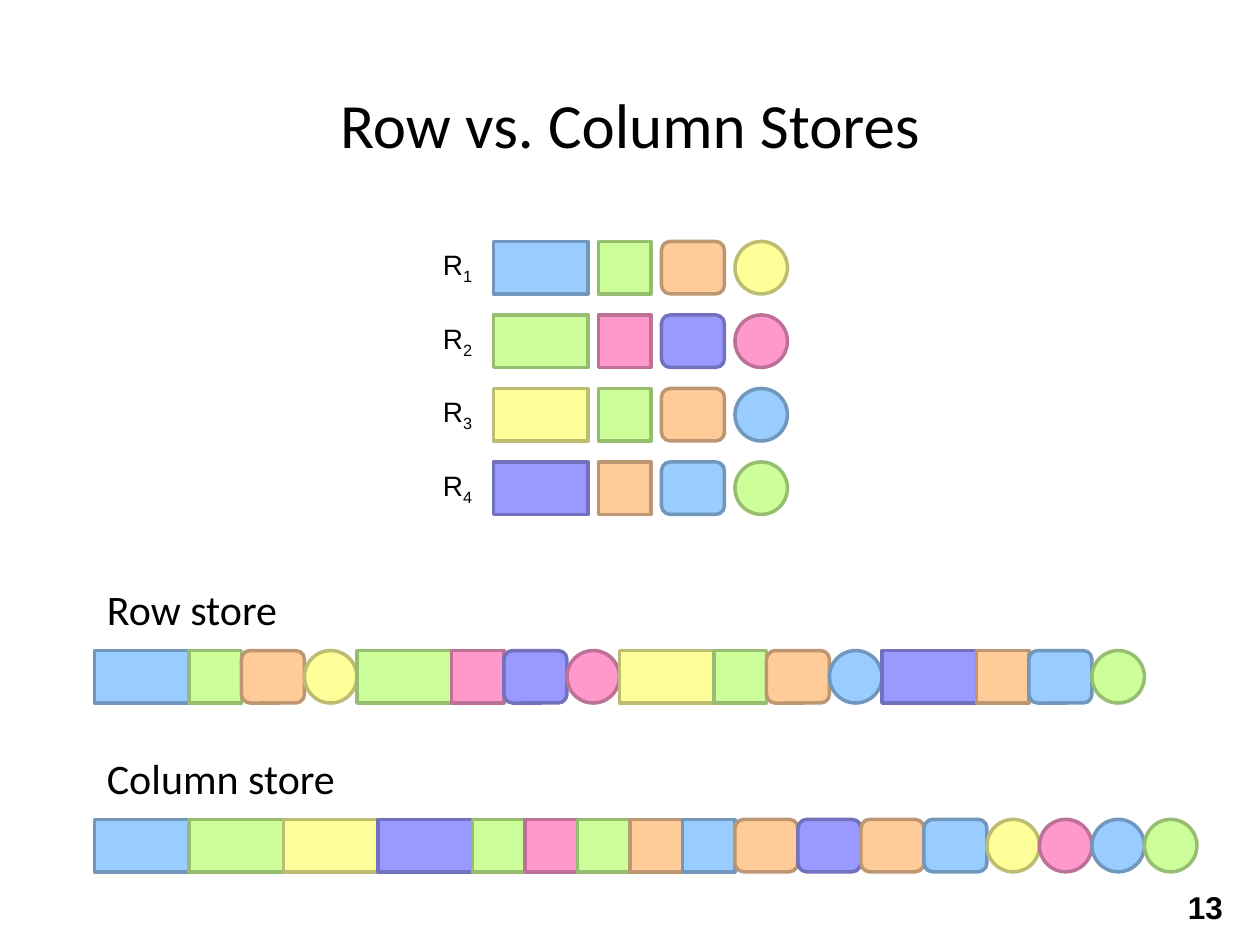
"""Build a slide comparing row and column storage of four records."""
from dataclasses import dataclass
from typing import Any

from pptx import Presentation
from pptx.dml.color import RGBColor
from pptx.enum.shapes import MSO_SHAPE as Shape
from pptx.enum.text import MSO_ANCHOR as Anchor, MSO_AUTO_SIZE as AutoSize, PP_ALIGN as Align
from pptx.util import Inches, Pt

BLACK = RGBColor(0x00, 0x00, 0x00)
UNIT = Inches(1 / 12)
HEIGHT = 5 * UNIT


@dataclass(frozen=True)
class Paint:
    fill: RGBColor
    line: RGBColor


@dataclass(frozen=True)
class Field:
    shape: Any
    units: int


@dataclass(frozen=True)
class Cell:
    field: Field
    paint: Paint


@dataclass(frozen=True)
class Store:
    name: str
    top: float
    label_width: float
    cells: list[Cell]


BLUE = Paint(RGBColor(0x99, 0xCC, 0xFF), RGBColor(0x71, 0x97, 0xBD))
GREEN = Paint(RGBColor(0xCC, 0xFF, 0x99), RGBColor(0x97, 0xBD, 0x71))
ORANGE = Paint(RGBColor(0xFF, 0xCC, 0x99), RGBColor(0xBD, 0x97, 0x71))
YELLOW = Paint(RGBColor(0xFF, 0xFF, 0x99), RGBColor(0xBD, 0xBD, 0x71))
PINK = Paint(RGBColor(0xFF, 0x99, 0xCC), RGBColor(0xBD, 0x71, 0x97))
PURPLE = Paint(RGBColor(0x99, 0x99, 0xFF), RGBColor(0x71, 0x71, 0xBD))

WIDE = Field(Shape.RECTANGLE, 9)
SQUARE = Field(Shape.RECTANGLE, 5)
ROUNDED = Field(Shape.ROUNDED_RECTANGLE, 6)
CIRCLE = Field(Shape.OVAL, 5)
FIELDS = (WIDE, SQUARE, ROUNDED, CIRCLE)

PAINTS = (
    (BLUE, GREEN, ORANGE, YELLOW),
    (GREEN, PINK, PURPLE, PINK),
    (YELLOW, GREEN, ORANGE, BLUE),
    (PURPLE, ORANGE, BLUE, GREEN),
)
RECORDS = [[Cell(field, paint) for field, paint in zip(FIELDS, paints)] for paints in PAINTS]
ROW_CELLS = [cell for record in RECORDS for cell in record]
COLUMN_CELLS = [cell for column in zip(*RECORDS) for cell in column]
COLUMN_CELLS.insert(8, Cell(SQUARE, BLUE))

STORES = (
    Store("Row store", 4.58, 1.64, ROW_CELLS),
    Store("Column store", 5.92, 2.1, COLUMN_CELLS),
)


def apply(target: Any, values: dict[str, Any]) -> None:
    for name, value in values.items():
        setattr(target, name, value)


def draw_cells(shapes: Any, cells: list[Cell], left: int, top: int, gap: int = 0) -> None:
    for cell in cells:
        width = cell.field.units * UNIT
        box = shapes.add_shape(cell.field.shape, left, top, width, HEIGHT)
        box.shadow.inherit = False
        box.fill.solid()
        box.fill.fore_color.rgb = cell.paint.fill
        box.line.color.rgb = cell.paint.line
        box.line.width = Pt(2)
        left += width + gap


def add_span(para: Any, text: str, size: int, face: str, bold: bool = False) -> Any:
    span = para.add_run()
    span.text = text
    apply(span.font, {"size": Pt(size), "name": face, "bold": bold})
    span.font.color.rgb = BLACK
    return span


def add_label(shapes: Any, left: int, top: int, width: int, height: int) -> Any:
    frame = shapes.add_textbox(left, top, width, height).text_frame
    apply(frame, {"word_wrap": False, "auto_size": AutoSize.SHAPE_TO_FIT_TEXT})
    return frame.paragraphs[0]


def draw_record(shapes: Any, number: int, cells: list[Cell]) -> None:
    top = (16 + 7 * number) * UNIT
    para = add_label(shapes, 41 * UNIT, top, Inches(0.45), Inches(0.37))
    add_span(para, "R", 16, "Arial")
    subscript = add_span(para, str(number), 16, "Arial")
    subscript.font._element.set("baseline", "-25000")
    draw_cells(shapes, cells, 47 * UNIT, top, UNIT)


def draw_store(page: Any, store: Store) -> None:
    group = page.shapes.add_group_shape()
    left, top = Inches(0.75), Inches(store.top)
    draw_cells(group.shapes, store.cells, left, top + 7 * UNIT)
    para = add_label(group.shapes, left, top, Inches(store.label_width), Inches(0.5))
    add_span(para, store.name, 24, "Calibri")


def draw_title(page: Any, text: str) -> None:
    title = page.shapes.title
    apply(title, {"left": 0, "top": Inches(0.6), "width": Inches(10), "height": Inches(0.75)})
    apply(title.text_frame, {"vertical_anchor": Anchor.MIDDLE, "word_wrap": True})
    para = title.text_frame.paragraphs[0]
    para.alignment = Align.CENTER
    add_span(para, text, 36, "Calibri")


def draw_page_number(page: Any, text: str) -> None:
    box = page.shapes.add_textbox(Inches(9.33), Inches(7), Inches(0.58), Inches(0.4))
    box.text_frame.word_wrap = True
    add_span(box.text_frame.paragraphs[0], text, 18, "Arial", bold=True)


def main() -> None:
    deck = Presentation()
    apply(deck, {"slide_width": Inches(10), "slide_height": Inches(7.5)})
    page = deck.slides.add_slide(deck.slide_layouts[5])
    draw_title(page, "Row vs. Column Stores")
    for number, cells in enumerate(RECORDS, start=1):
        draw_record(page.shapes, number, cells)
    for store in STORES:
        draw_store(page, store)
    draw_page_number(page, "13")
    deck.save("out.pptx")


if __name__ == "__main__":
    main()
